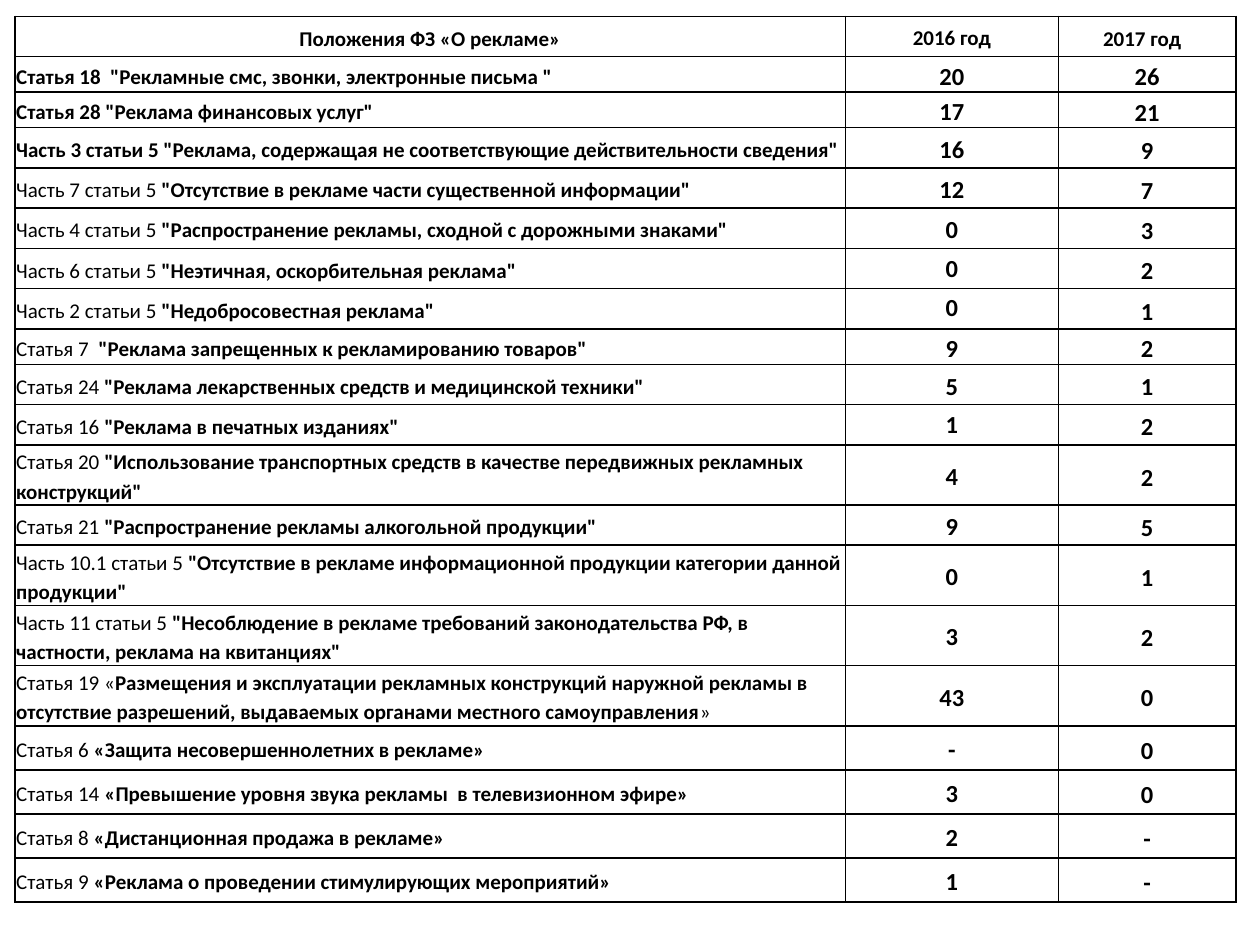
from lxml.etree import SubElement
from pptx import Presentation
from pptx.dml.color import RGBColor
from pptx.enum.text import MSO_ANCHOR, PP_ALIGN
from pptx.oxml.ns import qn
from pptx.util import Pt

COLUMN_WIDTHS = (474.5, 121.7, 101.5)
HEADER_HEIGHT = 23
HEADINGS = ("|Положения ФЗ «О рекламе»", "|2016 год", "|2017 год")

# Provision (parts split by "|": regular, bold, regular), 2016, 2017, row height
PROVISIONS = [
    ('|Статья 18  "Рекламные смс, звонки, электронные письма "', "20", "26", 16.6),
    ('|Статья 28 "Реклама финансовых услуг"', "17", "21", 15.1),
    ('|Часть 3 статьи 5 "Реклама, содержащая не соответствующие действительности сведения"',
     "16", "9", 23),
    ('Часть 7 статьи 5 |"Отсутствие в рекламе части существенной информации"', "12", "7", 23),
    ('Часть 4 статьи 5 |"Распространение рекламы, сходной с дорожными знаками"', "0", "3", 23),
    ('Часть 6 статьи 5 |"Неэтичная, оскорбительная реклама"', "0", "2", 23),
    ('Часть 2 статьи 5 |"Недобросовестная реклама"', "0", "1", 23),
    ('Статья 7  |"Реклама запрещенных к рекламированию товаров"', "9", "2", 19.4),
    ('Статья 24| "Реклама лекарственных средств и медицинской техники"', "5", "1", 23),
    ('Статья 16 |"Реклама в печатных изданиях"', "1", "2", 23),
    ('Статья 20 |"Использование транспортных средств в качестве передвижных рекламных '
     'конструкций"', "4", "2", 23),
    ('Статья 21 |"Распространение рекламы алкогольной продукции"', "9", "5", 23),
    ('Часть 10.1 статьи 5 |"Отсутствие в рекламе информационной продукции категории данной '
     'продукции"', "0", "1", 25.9),
    ('Часть 11 статьи 5| "Несоблюдение в рекламе требований законодательства РФ, в частности, '
     'реклама на квитанциях"', "3", "2", 30.2),
    ('Статья 19 «|Размещения и эксплуатации рекламных конструкций наружной рекламы в '
     'отсутствие разрешений, выдаваемых органами местного самоуправления|»', "43", "0", 34.6),
    ('Статья 6 |«Защита несовершеннолетних в рекламе»', "-", "0", 25.2),
    ('Статья 14 |«Превышение уровня звука рекламы  в телевизионном эфире»', "3", "0", 25.2),
    ('Статья 8 |«Дистанционная продажа в рекламе»', "2", "-", 25.2),
    ('Статья 9 |«Реклама о проведении стимулирующих мероприятий»', "1", "-", 25.2),
]
# Rows whose first two cells have a fixed line height
FIXED_SPACING = {6: Pt(17.4), 7: Pt(16.8), 10: Pt(17.4)}


def color(hex_code):
    return RGBColor.from_string(hex_code)


def add_borders(cell, hex_code="000000", width=1):
    properties = cell._tc.get_or_add_tcPr()
    for position, side in enumerate(("a:lnL", "a:lnR", "a:lnT", "a:lnB")):
        line = SubElement(properties, qn(side), w=str(Pt(width)))
        fill = SubElement(line, qn("a:solidFill"))
        SubElement(fill, qn("a:srgbClr"), val=hex_code)
        properties.insert(position, line)


def write_parts(paragraph, marked_text, size):
    """Write the parts between "|" marks, every second one in bold."""
    for index, part in enumerate(marked_text.split("|")):
        if not part:
            continue
        run = paragraph.add_run()
        run.text = part
        run.font.name = "Calibri"
        run.font.size = Pt(size)
        run.font.bold = index % 2 == 1
        run.font.color.rgb = color("000000")


def fill_cell(cell, marked_text, size, centered, spacing, inset):
    cell.fill.solid()
    cell.fill.fore_color.rgb = color("FFFFFF")
    cell.vertical_anchor = MSO_ANCHOR.MIDDLE
    cell.margin_left = cell.margin_right = cell.margin_top = Pt(inset)
    cell.margin_bottom = Pt(0)
    paragraph = cell.text_frame.paragraphs[0]
    paragraph.alignment = PP_ALIGN.CENTER if centered else PP_ALIGN.LEFT
    paragraph.line_spacing = spacing
    write_parts(paragraph, marked_text, size)
    add_borders(cell)


def add_violations_table(slide):
    rows = [(*HEADINGS, HEADER_HEIGHT)]
    rows += [(provision, f"|{y2016}", f"|{y2017}", height)
             for provision, y2016, y2017, height in PROVISIONS]
    frame = slide.shapes.add_table(len(rows), len(COLUMN_WIDTHS),
                                   Pt(8.6), Pt(9.4), Pt(sum(COLUMN_WIDTHS)), Pt(502.6))
    table = frame.table
    table.first_row = table.horz_banding = False
    for column, width in zip(table.columns, COLUMN_WIDTHS):
        column.width = Pt(width)
    for r, (*texts, height) in enumerate(rows):
        table.rows[r].height = Pt(height)
        for c, text in enumerate(texts):
            fill_cell(table.cell(r, c), text,
                      size=14 if r and c else 12,
                      centered=r == 0 or c > 0,
                      spacing=FIXED_SPACING.get(r, 1.15) if c < 2 else 1.15,
                      inset=0 if c == 1 else 0.7)
    table.cell(0, 2).margin_right = Pt(6.5)
    frame.height = Pt(502.6)


def main():
    presentation = Presentation()
    presentation.slide_width, presentation.slide_height = Pt(720), Pt(540)
    slide = presentation.slides.add_slide(presentation.slide_layouts[6])
    add_violations_table(slide)
    presentation.save("out.pptx")


if __name__ == "__main__":
    main()
